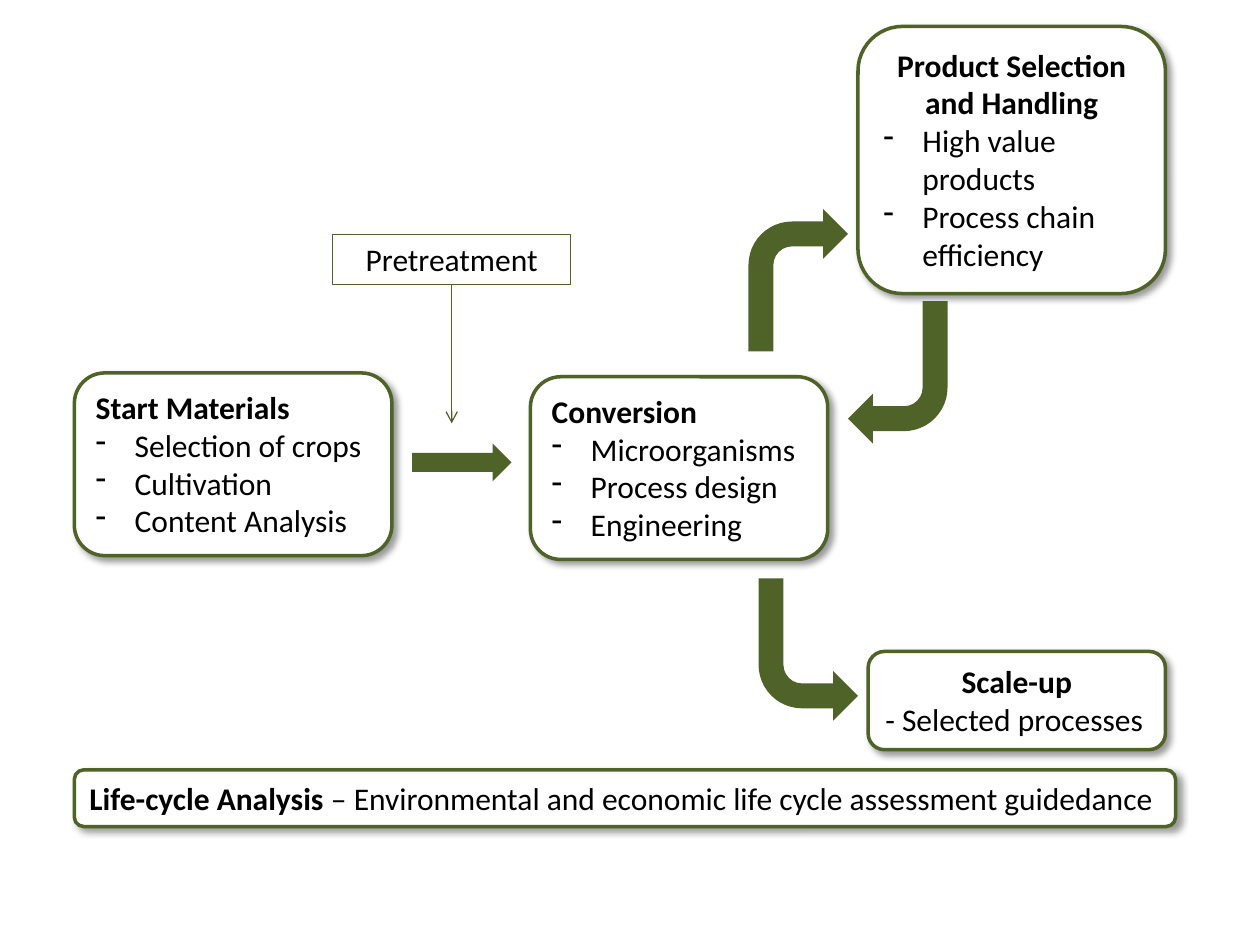
"""Build a one-slide process flow from start materials to scale-up."""
from dataclasses import dataclass

from pptx import Presentation
from pptx.dml.color import RGBColor
from pptx.enum.shapes import MSO_CONNECTOR, MSO_SHAPE
from pptx.enum.text import MSO_ANCHOR, MSO_AUTO_SIZE, PP_ALIGN
from pptx.oxml import parse_xml
from pptx.oxml.ns import nsdecls, qn
from pptx.oxml.xmlchemy import OxmlElement
from pptx.slide import Slide
from pptx.util import Inches, Pt

GREEN = RGBColor(0x4F, 0x62, 0x28)
WHITE = RGBColor(0xFF, 0xFF, 0xFF)
BLACK = RGBColor(0x00, 0x00, 0x00)
COLUMNS, ROWS = 100, 75
SHADOW = (
    f'<a:outerShdw {nsdecls("a")} blurRad="{Pt(4)}" dist="{Pt(3)}" dir="2700000" '
    'algn="tl" rotWithShape="0"><a:srgbClr val="000000"><a:alpha val="40000"/>'
    "</a:srgbClr></a:outerShdw>"
)


@dataclass
class FlowPage:
    page: Slide
    cell: int = Inches(10) // COLUMNS
    font_name: str = "Calibri"
    font_size: int = Pt(18)
    indent: int = Inches(0.31)

    def place(self, kind, area):
        shape = self.page.shapes.add_shape(kind, *(round(n * self.cell) for n in area))
        shape.shadow.inherit = False
        return shape

    def outline(self, shape, width):
        shape.line.color.rgb = GREEN
        shape.line.width = Pt(width)

    def prepare_text(self, shape):
        frame = shape.text_frame
        frame.word_wrap = True
        frame.auto_size = MSO_AUTO_SIZE.SHAPE_TO_FIT_TEXT
        frame.vertical_anchor = MSO_ANCHOR.TOP
        return frame

    def style(self, paragraph, align=PP_ALIGN.LEFT, bold=False):
        paragraph.alignment = align
        font = paragraph.font
        font.name, font.size, font.bold = self.font_name, self.font_size, bold
        font.color.rgb = BLACK

    def card(self, area, heading, align=PP_ALIGN.LEFT, bullets=(), line="", tail=""):
        box = self.place(MSO_SHAPE.ROUNDED_RECTANGLE, area)
        box.fill.solid()
        box.fill.fore_color.rgb = WHITE
        self.outline(box, 2)
        box._element.spPr.find(qn("a:effectLst")).append(parse_xml(SHADOW))
        frame = self.prepare_text(box)
        title = frame.paragraphs[0]
        span = title.add_run()
        span.text = heading
        self.style(title, align, bold=not tail)
        if tail:
            span.font.bold = True
            title.add_run().text = tail
        for item in bullets:
            self.bullet(frame.add_paragraph(), item)
        if line:
            paragraph = frame.add_paragraph()
            paragraph.text = line
            self.style(paragraph)

    def bullet(self, paragraph, text):
        paragraph.text = text
        properties = paragraph._p.get_or_add_pPr()
        properties.set("marL", str(self.indent))
        properties.set("indent", str(-self.indent))
        properties.append(OxmlElement("a:buFontTx"))
        mark = OxmlElement("a:buChar")
        mark.set("char", "-")
        properties.append(mark)
        self.style(paragraph)

    def label(self, area, text):
        box = self.place(MSO_SHAPE.RECTANGLE, area)
        box.fill.background()
        self.outline(box, 0.75)
        paragraph = self.prepare_text(box).paragraphs[0]
        paragraph.text = text
        self.style(paragraph, PP_ALIGN.CENTER)
        return box

    def block_arrow(self, kind, area, rotation=0, mirrored=False):
        arrow = self.place(kind, area)
        arrow.fill.solid()
        arrow.fill.fore_color.rgb = GREEN
        arrow.line.fill.background()
        arrow.rotation = rotation
        if mirrored:
            arrow._element.spPr.find(qn("a:xfrm")).set("flipH", "1")

    def arrow_below(self, box, end_row):
        middle = box.left + box.width // 2
        arrow = self.page.shapes.add_connector(
            MSO_CONNECTOR.STRAIGHT, middle, box.top + box.height,
            middle, round(end_row * self.cell))
        arrow.begin_connect(box, 2)
        self.outline(arrow, 0.75)
        properties = arrow._element.spPr
        head = OxmlElement("a:tailEnd")
        head.set("type", "arrow")
        properties.find(qn("a:ln")).append(head)
        properties.append(OxmlElement("a:effectLst"))


def main():
    deck = Presentation()
    deck.slide_width, deck.slide_height = Inches(10), Inches(7.5)
    flow = FlowPage(deck.slides.add_slide(deck.slide_layouts[6]))

    flow.card((5.9, 29.6, 25.2, 14.5), "Start Materials",
              bullets=("Selection of crops", "Cultivation", "Content Analysis"))
    flow.card((42.1, 29.9, 23.6, 14.5), "Conversion",
              bullets=("Microorganisms", "Process design", "Engineering"))
    flow.card((68.1, 2.1, 24.4, 21.2), "Product Selection and Handling", PP_ALIGN.CENTER,
              bullets=("High value products", "Process chain efficiency"))
    flow.card((5.9, 61.1, 87.4, 4.5), "Life-cycle Analysis",
              tail=" – Environmental and economic life cycle assessment guidedance")
    flow.card((68.9, 51.7, 23.6, 7.8), "Scale-up", PP_ALIGN.CENTER,
              line="- Selected processes")

    bend = (7.9, 11.3)
    flow.block_arrow(MSO_SHAPE.BENT_ARROW, (59.4, 16.6, *bend))
    flow.block_arrow(MSO_SHAPE.BENT_ARROW, (67.3, 23.9, *bend), rotation=180)
    flow.block_arrow(MSO_SHAPE.BENT_ARROW, (60.2, 45.9, *bend), rotation=180, mirrored=True)
    flow.block_arrow(MSO_SHAPE.RIGHT_ARROW, (32.7, 35.2, 7.9, 3))

    pretreatment = flow.label((26.4, 18.6, 18.9, 4), "Pretreatment")
    flow.arrow_below(pretreatment, 33.6)
    deck.save("out.pptx")


if __name__ == "__main__":
    main()
